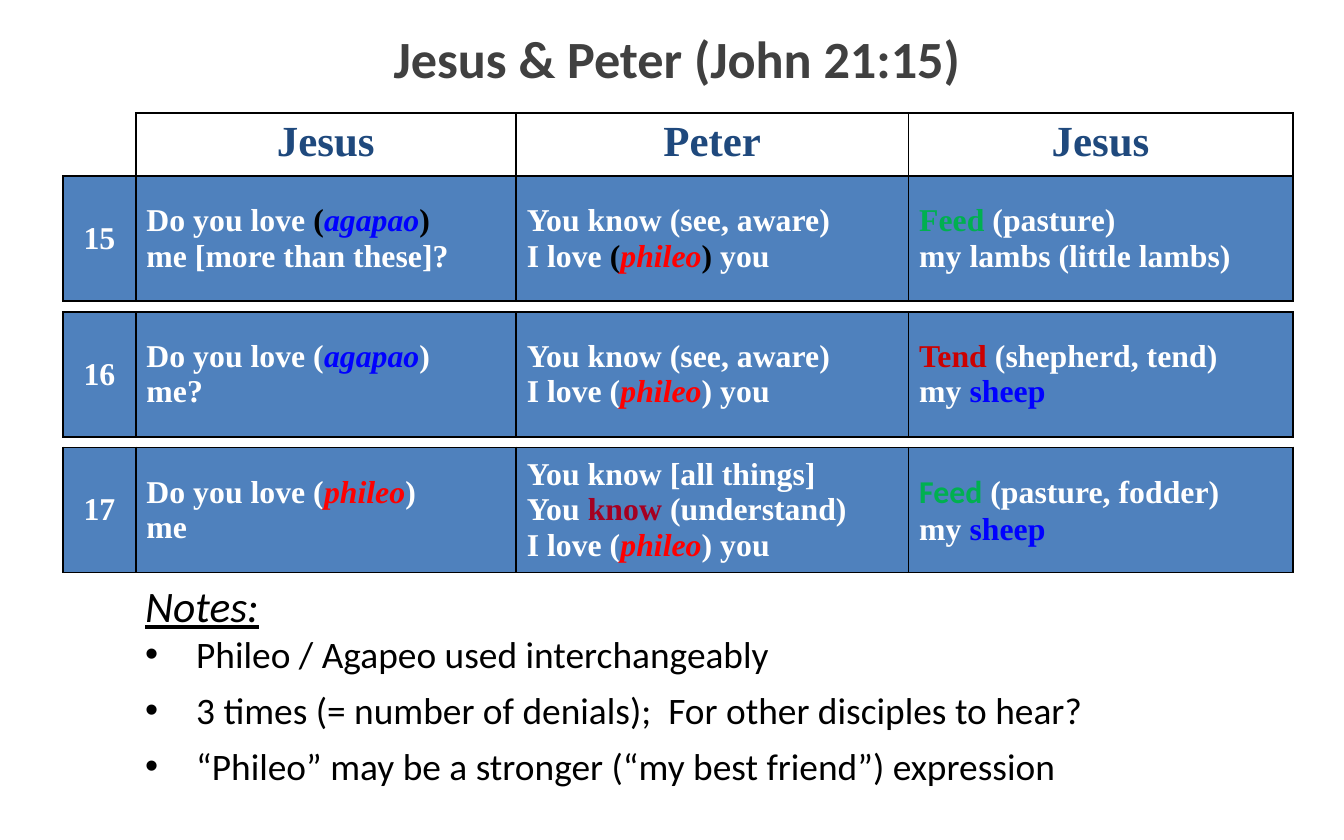
from copy import deepcopy
from lxml import etree
from pptx import Presentation
from pptx.dml.color import RGBColor
from pptx.enum.text import MSO_ANCHOR, MSO_AUTO_SIZE, PP_ALIGN
from pptx.oxml.ns import qn
from pptx.util import Inches, Pt

CENTER, LEFT = PP_ALIGN.CENTER, PP_ALIGN.LEFT
TOP, MIDDLE = MSO_ANCHOR.TOP, MSO_ANCHOR.MIDDLE
GROW, FIXED = MSO_AUTO_SIZE.SHAPE_TO_FIT_TEXT, MSO_AUTO_SIZE.NONE
BLACK = RGBColor(0x00, 0x00, 0x00)
WHITE = RGBColor(0xFF, 0xFF, 0xFF)
GRAY = RGBColor(0x40, 0x40, 0x40)
NAVY = RGBColor(0x1F, 0x49, 0x7D)
STEEL = RGBColor(0x4F, 0x81, 0xBD)
BLUE = RGBColor(0x00, 0x00, 0xFF)
RED = RGBColor(0xFF, 0x00, 0x00)
BRICK = RGBColor(0xCC, 0x00, 0x00)
WINE = RGBColor(0xA5, 0x00, 0x21)
GREEN = RGBColor(0x00, 0xB0, 0x50)
SANS, SERIF = "Calibri", "Times New Roman"

HEAD = dict(name=SERIF, size=Pt(23), bold=True, color=NAVY)
BODY = dict(name=SERIF, size=Pt(17), bold=True, color=WHITE)
NOTE = dict(name=SANS, size=Pt(20), bold=False, color=BLACK)
AGAPAO = ("agapao", dict(color=BLUE, italic=True))
PHILEO = ("phileo", dict(color=RED, italic=True))
SHEEP = ("sheep", dict(color=BLUE))
DARK = dict(color=BLACK)

COLS = (0.54, 2.83, 2.92, 2.86)
HEAD_H, ROW_H, PITCH = 0.47, 0.93, 1.01
HEADS = ("Jesus", "Peter", "Jesus")
VERSES = (
    ("15",
     [["Do you love ", ("(", DARK), AGAPAO, (") \n", DARK),
       "me [more than these]?"]],
     [["You know (see, aware)\nI love ", ("(", DARK), PHILEO,
       (") ", DARK), "you"]],
     [[("Feed ", dict(color=GREEN)),
       "(pasture) \nmy lambs (little lambs)"]]),
    ("16",
     [["Do you love (", AGAPAO, ") \nme?"]],
     [["You know (see, aware)\nI love (", PHILEO, ") you"]],
     [[("Tend", dict(color=BRICK)), " (shepherd, tend) \nmy ", SHEEP]]),
    ("17",
     [["Do you love (", PHILEO, ") \nme"]],
     [["You know [all things]\nYou ", ("know ", dict(color=WINE)),
       "(understand)"], ["I love (", PHILEO, ") you"]],
     [[("Feed", dict(color=GREEN, name=SANS)),
       " (pasture, fodder) \nmy ", SHEEP]]),
)
NOTES = (
    "Phileo / Agapeo used interchangeably",
    "3 times (= number of denials);  For other disciples to hear?",
    "“Phileo” may be a stronger (“my best friend”) expression",
)


def style(font, look):
    """Set font values from a dict."""
    for key, value in look.items():
        if key == "color":
            font.color.rgb = value
        else:
            setattr(font, key, value)


def write(para, parts, base):
    """Write styled runs, with a line break at each newline."""
    for part in parts:
        text, extra = (part, {}) if isinstance(part, str) else part
        for i, line in enumerate(text.split("\n")):
            if i:
                para.add_line_break()
                para._p[-1].append(deepcopy(run._r.rPr))
            if line:
                run = para.add_run()
                run.text = line
                style(run.font, {**base, **extra})


def edge(cell, sides):
    """Draw thin black borders on the given sides of a cell."""
    props = cell._tc.get_or_add_tcPr()
    for i, side in enumerate(sides):
        line = etree.Element(qn("a:ln" + side), w=str(Pt(1)))
        fill = etree.SubElement(line, qn("a:solidFill"))
        etree.SubElement(fill, qn("a:srgbClr"), val=str(BLACK))
        props.insert(i, line)


def fill_cell(cell, paras, base, back, align, anchor, sides="LRTB"):
    """Fill one table cell with text, colour and borders."""
    cell.fill.solid()
    cell.fill.fore_color.rgb = back
    cell.vertical_anchor = anchor
    cell.margin_left = cell.margin_right = Inches(0.08)
    cell.margin_top = cell.margin_bottom = Inches(0.04)
    frame = cell.text_frame
    for i, parts in enumerate(paras):
        para = frame.add_paragraph() if i else frame.paragraphs[0]
        para.alignment = align
        write(para, parts, base)
    edge(cell, sides)


def add_verse(slide, left, top, verse, heads=()):
    """Place one verse table, with a heading row if given."""
    rows = [HEAD_H, ROW_H] if heads else [ROW_H]
    table = slide.shapes.add_table(
        len(rows), len(COLS), Inches(left), Inches(top),
        Inches(sum(COLS)), Inches(sum(rows))).table
    table.first_row = table.horz_banding = False
    for col, width in zip(table.columns, COLS):
        col.width = Inches(width)
    for row, height in zip(table.rows, rows):
        row.height = Inches(height)
    if heads:
        fill_cell(table.cell(0, 0), [], HEAD, WHITE, CENTER, TOP, "RB")
        for i, head in enumerate(heads, 1):
            fill_cell(table.cell(0, i), [[head]], HEAD, WHITE, CENTER, TOP)
    last = len(rows) - 1
    number, *cells = verse
    fill_cell(table.cell(last, 0), [[number]], BODY, STEEL, CENTER, MIDDLE)
    for i, paras in enumerate(cells, 1):
        fill_cell(table.cell(last, i), paras, BODY, STEEL, LEFT, MIDDLE)


def place(shape, box, anchor, fit):
    """Move a placeholder into a box and return its text frame."""
    for key, value in zip(("left", "top", "width", "height"), box):
        setattr(shape, key, Inches(value))
    frame = shape.text_frame
    frame.word_wrap = True
    frame.auto_size = fit
    frame.vertical_anchor = anchor
    return frame


def add_title(slide, box):
    """Place the slide title."""
    para = place(slide.shapes.title, box, MIDDLE, FIXED).paragraphs[0]
    para.alignment = CENTER
    write(para, ["Jesus & Peter (John 21:15)"],
          dict(name=SANS, size=Pt(28), bold=True, color=GRAY))


def add_notes(slide, box):
    """Place the notes heading and its bullet list."""
    frame = place(slide.placeholders[1], box, TOP, GROW)
    para = frame.paragraphs[0]
    props = para._p.get_or_add_pPr()
    props.set("marL", "0")
    props.set("indent", "0")
    etree.SubElement(props, qn("a:buNone"))
    para.space_before = Pt(0)
    write(para, ["Notes:"],
          {**NOTE, "size": Pt(23.3), "italic": True, "underline": True})
    for text in NOTES:
        para = frame.add_paragraph()
        props = para._p.get_or_add_pPr()
        props.set("marL", str(Inches(0.38)))
        props.set("indent", str(-Inches(0.38)))
        etree.SubElement(props, qn("a:buChar"), char="•")
        para.space_before, para.space_after = Pt(0), Pt(6)
        write(para, [text], NOTE)


def main():
    """Build and save the slide."""
    deck = Presentation()
    deck.slide_width, deck.slide_height = Inches(10), Inches(6.25)
    slide = deck.slides.add_slide(deck.slide_layouts[1])
    add_title(slide, (0.24, 0.15, 9.59, 0.56))
    add_notes(slide, (0.98, 4.26, 8.12, 1.67))
    left, top = 0.47, 1.31
    add_verse(slide, left, top - HEAD_H, VERSES[0], HEADS)
    for i, verse in enumerate(VERSES[1:], 1):
        add_verse(slide, left, top + i * PITCH, verse)
    deck.save("out.pptx")


if __name__ == "__main__":
    main()
